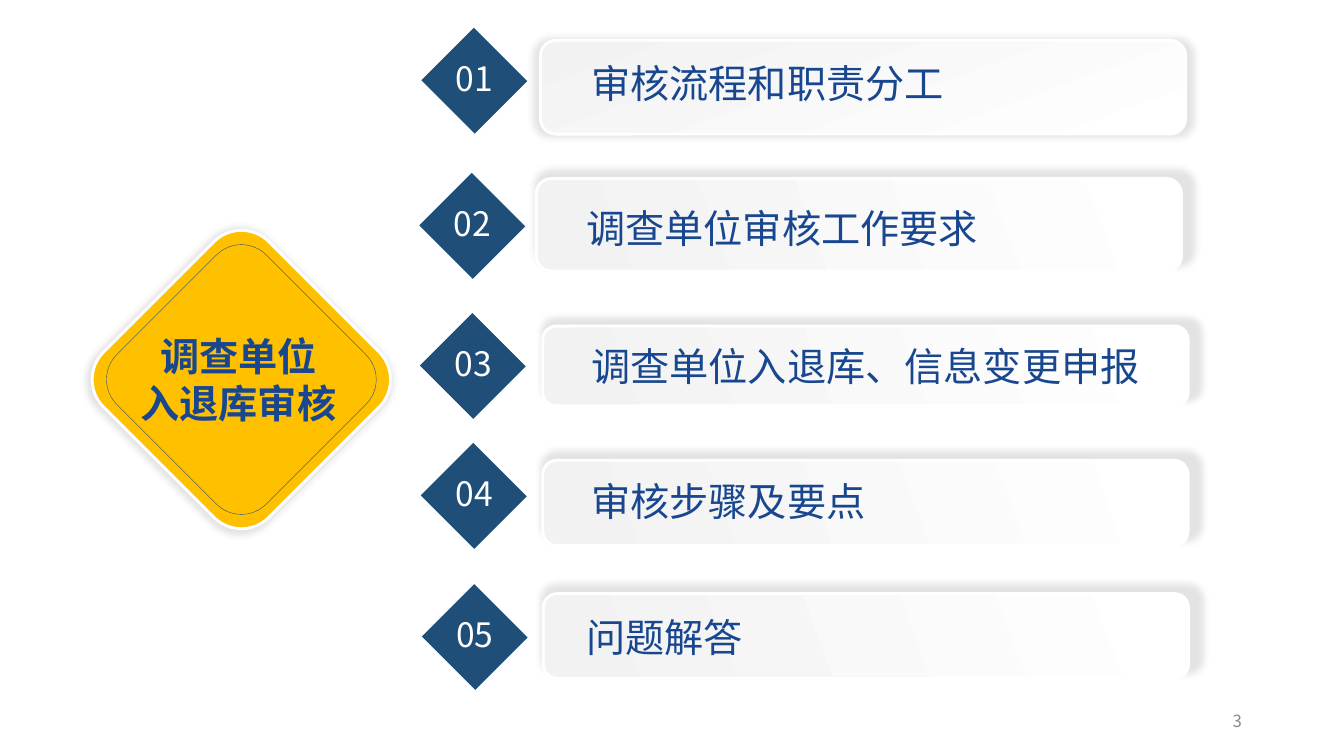
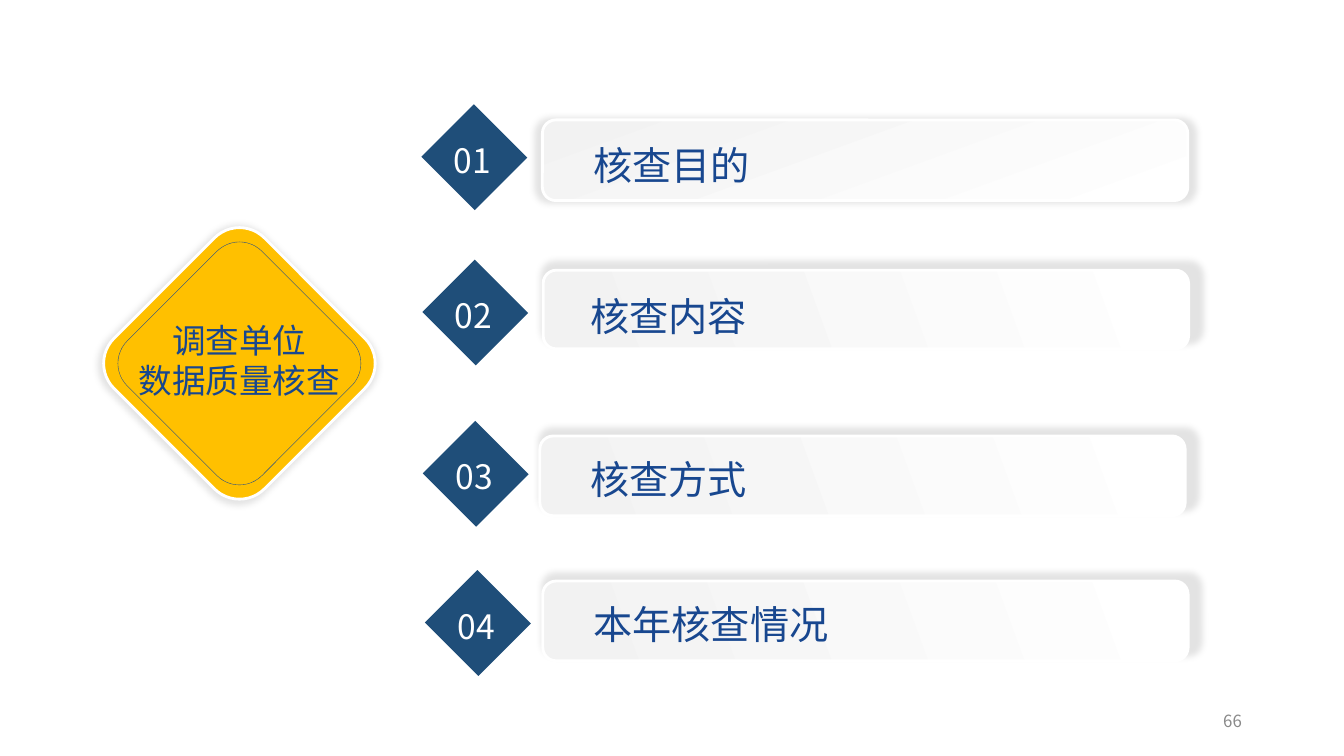
from dataclasses import dataclass

from lxml import etree
from pptx import Presentation
from pptx.dml.color import RGBColor
from pptx.enum.shapes import MSO_SHAPE
from pptx.enum.text import MSO_ANCHOR, MSO_AUTO_SIZE, PP_ALIGN
from pptx.oxml.ns import qn
from pptx.util import Pt

RECTANGLE = MSO_SHAPE.RECTANGLE
ROUNDED = MSO_SHAPE.ROUNDED_RECTANGLE
LEFT, CENTER, RIGHT = PP_ALIGN.LEFT, PP_ALIGN.CENTER, PP_ALIGN.RIGHT
TOP, MIDDLE = MSO_ANCHOR.TOP, MSO_ANCHOR.MIDDLE
FIXED_SIZE = MSO_AUTO_SIZE.NONE

AMBER = RGBColor(0xFF, 0xC0, 0x00)
NAVY = RGBColor(0x1F, 0x4E, 0x79)
BLUE = RGBColor(0x18, 0x47, 0x8F)
WHITE = RGBColor(0xFF, 0xFF, 0xFF)
PALE = RGBColor(0xF2, 0xF2, 0xF2)
GRAY = RGBColor(0x89, 0x89, 0x89)

FONT = "Noto Sans CJK SC"
TITLE_ONLY = 5
PANEL_WIDTH = 461
LABEL_WIDTH = 432
SIGN_BORDER = 8


@dataclass(frozen=True)
class Box:
    left: float
    top: float
    width: float
    height: float

    @classmethod
    def centered(cls, x: float, y: float, width: float, height: float) -> "Box":
        return cls(x - width / 2, y - height / 2, width, height)

    def lengths(self) -> tuple:
        return Pt(self.left), Pt(self.top), Pt(self.width), Pt(self.height)


@dataclass(frozen=True)
class TextStyle:
    size: float
    color: RGBColor
    align: PP_ALIGN = LEFT
    bold: bool = False
    anchor: MSO_ANCHOR = TOP


@dataclass(frozen=True)
class Sign:
    caption: str
    x: float
    y: float
    side: float
    caption_box: Box
    style: TextStyle


@dataclass(frozen=True)
class Row:
    """One agenda entry: diamond centre, panel and label positions."""
    label: str
    diamond: tuple[float, float]
    panel: Box
    label_at: tuple[float, float]


@dataclass(frozen=True)
class Agenda:
    sign: Sign
    number_offset: tuple[float, float]
    rows: list[Row]
    page: str


NUMBER_STYLE = TextStyle(24, WHITE)
LABEL_STYLE = TextStyle(28, BLUE)
PAGE_STYLE = TextStyle(12, GRAY, RIGHT, anchor=MIDDLE)
PAGE_BOX = Box(678.2, 500.4, 216, 28.8)


def panel(left: float, top: float, height: float) -> Box:
    return Box(left, top, PANEL_WIDTH, height)


AGENDAS = [
    Agenda(
        Sign("调查单位\n入退库审核", 172.4, 271.1, 167,
             Box(79.9, 234, 180.7, 74.9), TextStyle(28, BLUE, CENTER, True)),
        (-20.2, -20),
        [
            Row("审核流程和职责分工", (338.8, 57.6), panel(386, 28.8, 67), (415.4, 38.9)),
            Row("调查单位审核工作要求", (337.3, 161.3), panel(383, 127.4, 66.2), (411.8, 142.6)),
            Row("调查单位入退库、信息变更申报", (337.7, 261.4), panel(387.7, 232.9, 57), (415.4, 241.2)),
            Row("审核步骤及要点", (338.4, 354.2), panel(387.7, 328.7, 61), (415.4, 337.7)),
            Row("问题解答", (339.1, 455), panel(388, 424, 60.5), (411.8, 434.2)),
        ],
        "3",
    ),
    Agenda(
        Sign("调查单位\n数据质量核查", 171, 259.6, 152,
             Box(80.6, 224.6, 180.7, 65.5), TextStyle(24, BLUE, CENTER)),
        (-21.6, -16),
        [
            Row("核查目的", (338.8, 112.3), panel(387.4, 85.7, 57.6), (416.9, 97.2)),
            Row("核查内容", (339.5, 223.2), panel(388, 193, 56.2), (414.7, 205.2)),
            Row("核查方式", (339.8, 338.4), panel(385.6, 311.4, 57), (414.7, 321.8)),
            Row("本年核查情况", (341.3, 445), panel(387.7, 415, 57), (416.9, 425.5)),
        ],
        "66",
    ),
]


def write_text(shape, text: str, style: TextStyle) -> None:
    text_frame = shape.text_frame
    text_frame.text = text
    text_frame.word_wrap = True
    text_frame.auto_size = FIXED_SIZE
    text_frame.vertical_anchor = style.anchor
    for paragraph in text_frame.paragraphs:
        paragraph.alignment = style.align
        for run in paragraph.runs:
            run.font.name = FONT
            run.font.size = Pt(style.size)
            run.font.bold = style.bold
            run.font.color.rgb = style.color
            properties = run._r.get_or_add_rPr()
            etree.SubElement(properties, qn("a:ea"), typeface=FONT)


def add_text(slide, box: Box, text: str, style: TextStyle) -> None:
    write_text(slide.shapes.add_textbox(*box.lengths()), text, style)


def add_plain_shape(slide, kind: MSO_SHAPE, box: Box, rotation: float = 0):
    """Add a shape without fill, line or shadow."""
    shape = slide.shapes.add_shape(kind, *box.lengths())
    shape.rotation = rotation
    shape.shadow.inherit = False
    shape.fill.background()
    shape.line.fill.background()
    return shape


def set_line(shape, color: RGBColor, width: float) -> None:
    shape.line.color.rgb = color
    shape.line.width = Pt(width)


def add_soft_shadow(shape) -> None:
    effects = shape.element.spPr.find(qn("a:effectLst"))
    shadow = etree.SubElement(effects, qn("a:outerShdw"), blurRad=str(Pt(5)),
                              sx="102000", sy="102000", algn="ctr", rotWithShape="0")
    color = etree.SubElement(shadow, qn("a:srgbClr"), val="000000")
    etree.SubElement(color, qn("a:alpha"), val="11000")


def add_sign(slide, sign: Sign) -> None:
    """Draw the amber road sign; its caption is the slide title."""
    outer = Box.centered(sign.x, sign.y, sign.side, sign.side)
    plate = add_plain_shape(slide, ROUNDED, outer, 45)
    plate.fill.solid()
    plate.fill.fore_color.rgb = AMBER
    set_line(plate, WHITE, 2)
    add_soft_shadow(plate)

    inner_side = sign.side - 2 * SIGN_BORDER
    inner = Box.centered(sign.x, sign.y, inner_side, inner_side)
    set_line(add_plain_shape(slide, ROUNDED, inner, 45), BLUE, 0.25)

    title = slide.shapes.title
    title.left, title.top, title.width, title.height = sign.caption_box.lengths()
    write_text(title, sign.caption, sign.style)
    slide.shapes.element.append(title.element)


def add_panel(slide, box: Box, turned: bool) -> None:
    """Draw a shaded panel; a turned one is an upright shape on its side."""
    rotation = 0
    if turned:
        center_x, center_y = box.left + box.width / 2, box.top + box.height / 2
        box = Box.centered(center_x, center_y, box.height, box.width)
        rotation = 270
    shape = add_plain_shape(slide, ROUNDED, box, rotation)
    shape.fill.gradient()
    shape.fill.gradient_angle = 110
    for stop, color in zip(shape.fill.gradient_stops, (WHITE, PALE)):
        stop.color.rgb = color
    set_line(shape, WHITE, 2)
    add_soft_shadow(shape)


def add_row(slide, number: int, row: Row, number_offset: tuple[float, float]) -> None:
    add_panel(slide, row.panel, turned=number > 1)
    add_text(slide, Box(*row.label_at, LABEL_WIDTH, 41), row.label, LABEL_STYLE)

    x, y = row.diamond
    diamond = add_plain_shape(slide, RECTANGLE, Box.centered(x, y, 54, 53), 225)
    diamond.fill.solid()
    diamond.fill.fore_color.rgb = NAVY
    offset_x, offset_y = number_offset
    add_text(slide, Box(x + offset_x, y + offset_y, 46, 36), f"{number:02}", NUMBER_STYLE)


def add_agenda(presentation, agenda: Agenda) -> None:
    slide = presentation.slides.add_slide(presentation.slide_layouts[TITLE_ONLY])
    add_sign(slide, agenda.sign)
    for number, row in enumerate(agenda.rows, start=1):
        add_row(slide, number, row, agenda.number_offset)
    add_text(slide, PAGE_BOX, agenda.page, PAGE_STYLE)


def main() -> None:
    presentation = Presentation()
    presentation.slide_width = Pt(960)
    presentation.slide_height = Pt(540)
    for agenda in AGENDAS:
        add_agenda(presentation, agenda)
    presentation.save("out.pptx")


if __name__ == "__main__":
    main()
